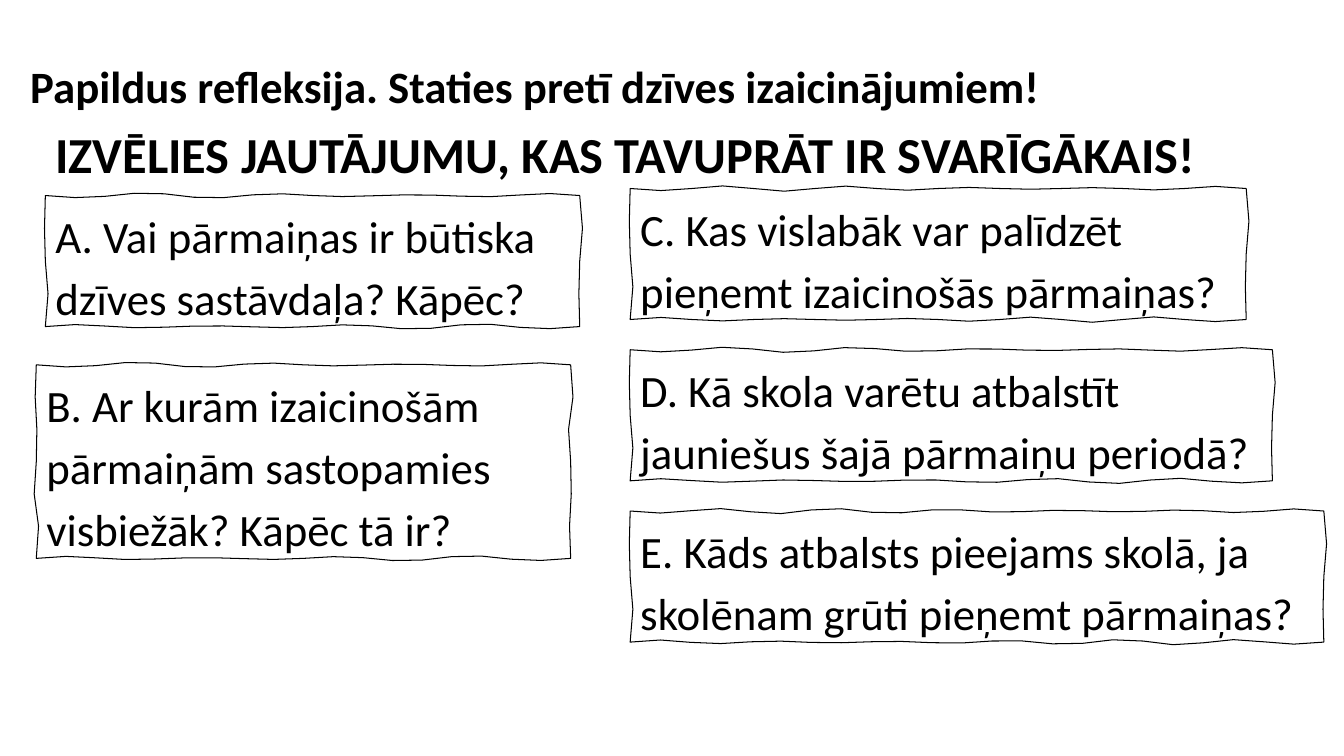
from dataclasses import dataclass
from math import pi, sin

from pptx import Presentation
from pptx.dml.color import RGBColor
from pptx.enum.text import MSO_ANCHOR, MSO_AUTO_SIZE, PP_ALIGN
from pptx.shapes.autoshape import Shape
from pptx.slide import Slide
from pptx.util import Emu, Pt

PX = 9144
INSET_X, INSET_Y = 10, 5
WAVE, STEP = 120, 30
INK = "000000"


@dataclass(frozen=True)
class Box:
    left: int
    top: int
    width: int
    height: int


@dataclass(frozen=True)
class Question:
    text: str
    box: Box


TITLE_BOX = Box(20, 45, 1186, 68)
PROMPT_BOX = Box(45, 113, 1268, 72)
QUESTIONS = [
    Question("A. Vai pārmaiņas ir būtiska dzīves sastāvdaļa? Kāpēc?",
             Box(45, 194, 530, 130)),
    Question("B. Ar kurām izaicinošām pārmaiņām sastopamies visbiežāk? Kāpēc tā ir?",
             Box(36, 362, 530, 192)),
    Question("C. Kas vislabāk var palīdzēt pieņemt izaicinošās pārmaiņas?",
             Box(625, 187, 611, 130)),
    Question("D. Kā skola varētu atbalstīt jauniešus šajā pārmaiņu periodā?",
             Box(625, 347, 637, 130)),
    Question("E. Kāds atbalsts pieejams skolā, ja skolēnam grūti pieņemt pārmaiņas?",
             Box(625, 507, 688, 130)),
]


def px(length: float) -> Emu:
    return Emu(round(length * PX))


def colour(value: str) -> RGBColor:
    return RGBColor.from_string(value)


def place(shape: Shape, box: Box) -> None:
    shape.left, shape.top = px(box.left), px(box.top)
    shape.width, shape.height = px(box.width), px(box.height)


def write(shape: Shape, text: str, box: Box, size: int, spacing: float,
          after: int, bold: bool = False,
          align: PP_ALIGN = PP_ALIGN.LEFT) -> None:
    frame = shape.text_frame
    frame.text = text
    frame.word_wrap = True
    frame.auto_size = MSO_AUTO_SIZE.NONE
    frame.vertical_anchor = MSO_ANCHOR.TOP
    frame.margin_left = px(box.left + INSET_X) - shape.left
    frame.margin_top = px(box.top + INSET_Y) - shape.top
    frame.margin_right = (shape.left + shape.width
                          - px(box.left + box.width - INSET_X))
    frame.margin_bottom = (shape.top + shape.height
                           - px(box.top + box.height - INSET_Y))
    paragraph = frame.paragraphs[0]
    paragraph.alignment = align
    paragraph.line_spacing = spacing
    paragraph.space_before, paragraph.space_after = Pt(0), Pt(after)
    font = paragraph.font
    font.name, font.size, font.bold = "Calibri", Pt(size), bold
    font.color.rgb = colour(INK)


def wobbly_outline(box: Box) -> list[tuple[Emu, Emu]]:
    right, bottom = box.left + box.width, box.top + box.height
    corners = [(box.left, box.top), (right, box.top),
               (right, bottom), (box.left, bottom)]
    points = []
    for (x, y), (end_x, end_y) in zip(corners, corners[1:] + corners[:1]):
        length = abs(end_x - x) + abs(end_y - y)
        waves = max(1, round(length / WAVE))
        steps = round(length / STEP)
        for step in range(steps):
            part = step / steps
            swing = sin(2 * pi * waves * part) * (1.7 + sin(7 * part))
            across, down = (0, swing) if y == end_y else (swing, 0)
            points.append((px(x + (end_x - x) * part + across),
                           px(y + (end_y - y) * part + down)))
    return points


def add_question(slide: Slide, question: Question) -> None:
    start, *others = wobbly_outline(question.box)
    builder = slide.shapes.build_freeform(*start)
    builder.add_line_segments(others, close=True)
    frame = builder.convert_to_shape()
    frame.shadow.inherit = False
    frame.fill.background()
    frame.line.color.rgb = colour(INK)
    frame.line.width = Pt(0.75)
    write(frame, question.text, question.box, 32, 1.15, 8)


def main() -> None:
    deck = Presentation()
    deck.slide_width, deck.slide_height = px(1333), px(750)
    slide = deck.slides.add_slide(deck.slide_layouts[5])

    title = slide.shapes.title
    place(title, TITLE_BOX)
    write(title, "Papildus refleksija. Staties pretī dzīves izaicinājumiem!",
          TITLE_BOX, 32, 1.15, 10, True, PP_ALIGN.JUSTIFY)

    prompt = slide.shapes.add_textbox(0, 0, 0, 0)
    place(prompt, PROMPT_BOX)
    write(prompt, "IZVĒLIES JAUTĀJUMU, KAS TAVUPRĀT IR SVARĪGĀKAIS!",
          PROMPT_BOX, 36, 1.07, 8, True)

    for question in QUESTIONS:
        add_question(slide, question)

    deck.save("out.pptx")


if __name__ == "__main__":
    main()
